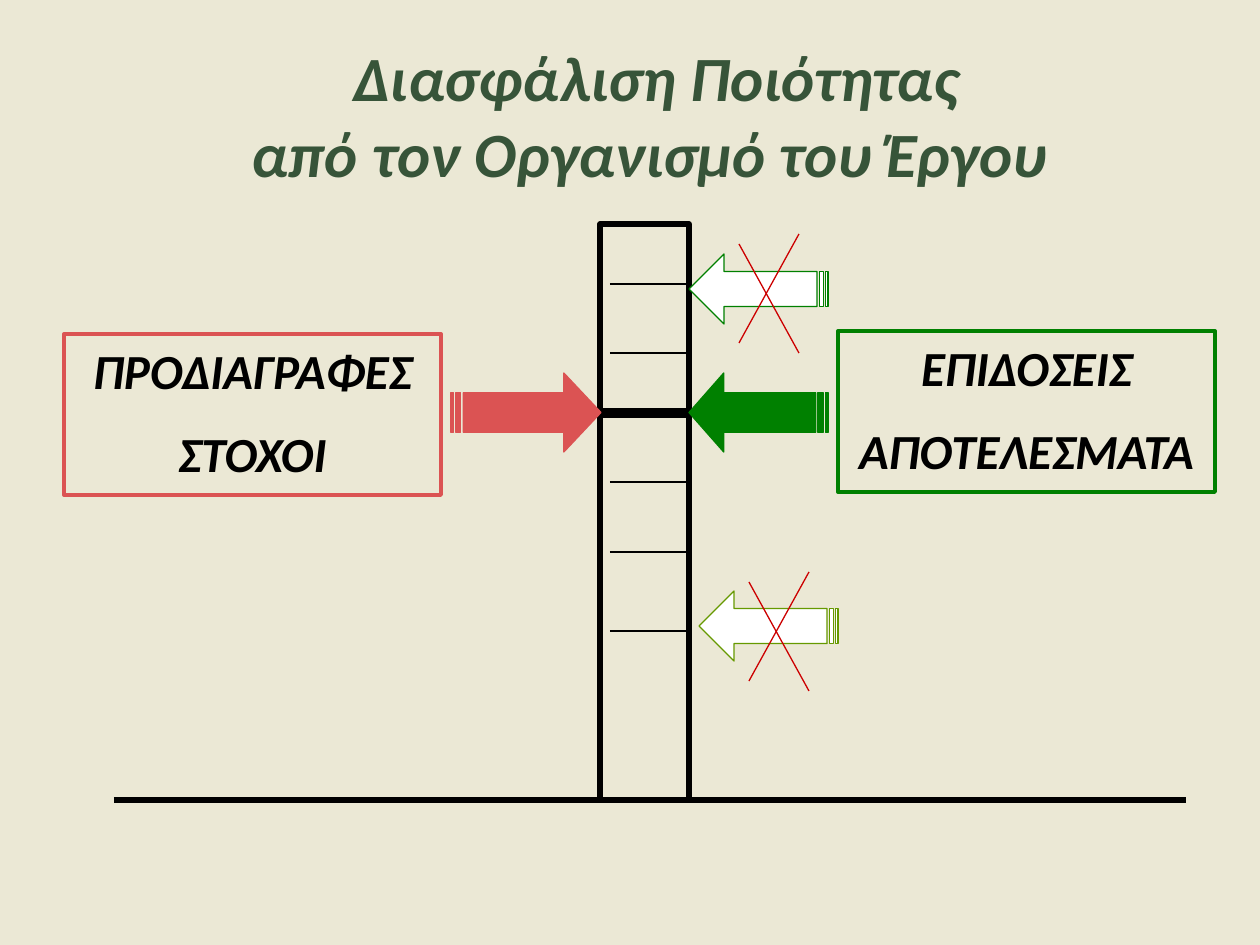
from lxml.etree import SubElement
from pptx import Presentation
from pptx.dml.color import RGBColor
from pptx.enum.shapes import MSO_CONNECTOR, MSO_SHAPE
from pptx.enum.text import MSO_ANCHOR as Anchor, MSO_AUTO_SIZE as AutoSize, PP_ALIGN as Align
from pptx.oxml.ns import qn
from pptx.util import Pt

SCALE = 914400 / 126
FONT = "Calibri"
BLACK, RED, GREEN, OLIVE, WHITE = "000000", "DB5353", "008000", "669900", "FFFFFF"
CROSS_RED = "CC0000"


def emu(*pixels):
    return [round(pixel * SCALE) for pixel in pixels]


def color(hex_text):
    return RGBColor.from_string(hex_text)


deck = Presentation()
deck.slide_width, deck.slide_height = emu(1260, 945)
page = deck.slides.add_slide(deck.slide_layouts[5])
page.background.fill.solid()
page.background.fill.fore_color.rgb = color("EBE8D5")

title = page.shapes.title
title.left, title.top, title.width, title.height = emu(213, 45, 873, 139)
frame = title.text_frame
frame.text = " Διασφάλιση Ποιότητας\vαπό τον Οργανισμό του Έργου"
frame.auto_size = AutoSize.NONE
frame.vertical_anchor = Anchor.MIDDLE
para = frame.paragraphs[0]
para.alignment = Align.CENTER
for span in para.runs:
    span.font.name = FONT
    span.font.size = Pt(36)
    span.font.bold = span.font.italic = True
    span.font.color.rgb = color("375439")

column = page.shapes.add_shape(MSO_SHAPE.RECTANGLE, *emu(600, 224, 89, 576))
column.shadow.inherit = False
column.fill.background()
column.line.color.rgb = color(BLACK)
column.line.width = Pt(3)

boxes = [
    (64, 334, RED, "ΠΡΟΔΙΑΓΡΑΦΕΣ\nΣΤΟΧΟΙ"),
    (838, 331, GREEN, "ΕΠΙΔΟΣΕΙΣ\nΑΠΟΤΕΛΕΣΜΑΤΑ"),
]
for left, top, outline, text in boxes:
    box = page.shapes.add_shape(MSO_SHAPE.RECTANGLE, *emu(left, top, 377, 161))
    box.shadow.inherit = False
    box.fill.background()
    box.line.color.rgb = color(outline)
    box.line.width = Pt(2.25)
    frame = box.text_frame
    frame.text = text
    frame.word_wrap = True
    frame.vertical_anchor = Anchor.TOP
    for para in frame.paragraphs:
        para.alignment = Align.CENTER
        para.space_before = Pt(14)
        for span in para.runs:
            span.font.name = FONT
            span.font.size = Pt(28)
            span.font.bold = span.font.italic = True
            span.font.color.rgb = color(BLACK)

ground = [(114, 800, 610, 800, BLACK, 3), (689, 800, 1186, 800, BLACK, 3)]
ticks = [(610, y, 689, y, BLACK, 0.75) for y in (284, 353, 482, 552, 631)]
target = [(600, 413, 689, 413, BLACK, 6)]
crosses = []
for x, y in ((739, 234), (749, 572)):
    crosses.append((x + 60, y, x, y + 109, CROSS_RED, 0.75))
    crosses.append((x, y + 10, x + 60, y + 119, CROSS_RED, 0.75))

arrows = [
    (451, 373, 150, 79, 0, RED, RED),
    (689, 373, 139, 79, 180, GREEN, GREEN),
    (689, 254, 139, 70, 180, WHITE, GREEN),
    (699, 591, 139, 70, 180, WHITE, OLIVE),
]


for layer in (ground + ticks + target, arrows, crosses):
    if layer is arrows:
        for left, top, width, height, turn, fill, outline in arrows:
            arrow = page.shapes.add_shape(
                MSO_SHAPE.STRIPED_RIGHT_ARROW, *emu(left, top, width, height)
            )
            arrow.adjustments[1] = round(width / height / 4, 2)
            arrow.rotation = turn
            arrow.shadow.inherit = False
            arrow.fill.solid()
            arrow.fill.fore_color.rgb = color(fill)
            arrow.line.color.rgb = color(outline)
            arrow.line.width = Pt(0.75)
        continue
    for x1, y1, x2, y2, stroke, weight in layer:
        line = page.shapes.add_connector(MSO_CONNECTOR.STRAIGHT, *emu(x1, y1, x2, y2))
        line.line.color.rgb = color(stroke)
        line.line.width = Pt(weight)
        SubElement(line._element.spPr, qn("a:effectLst"))

deck.save("out.pptx")
